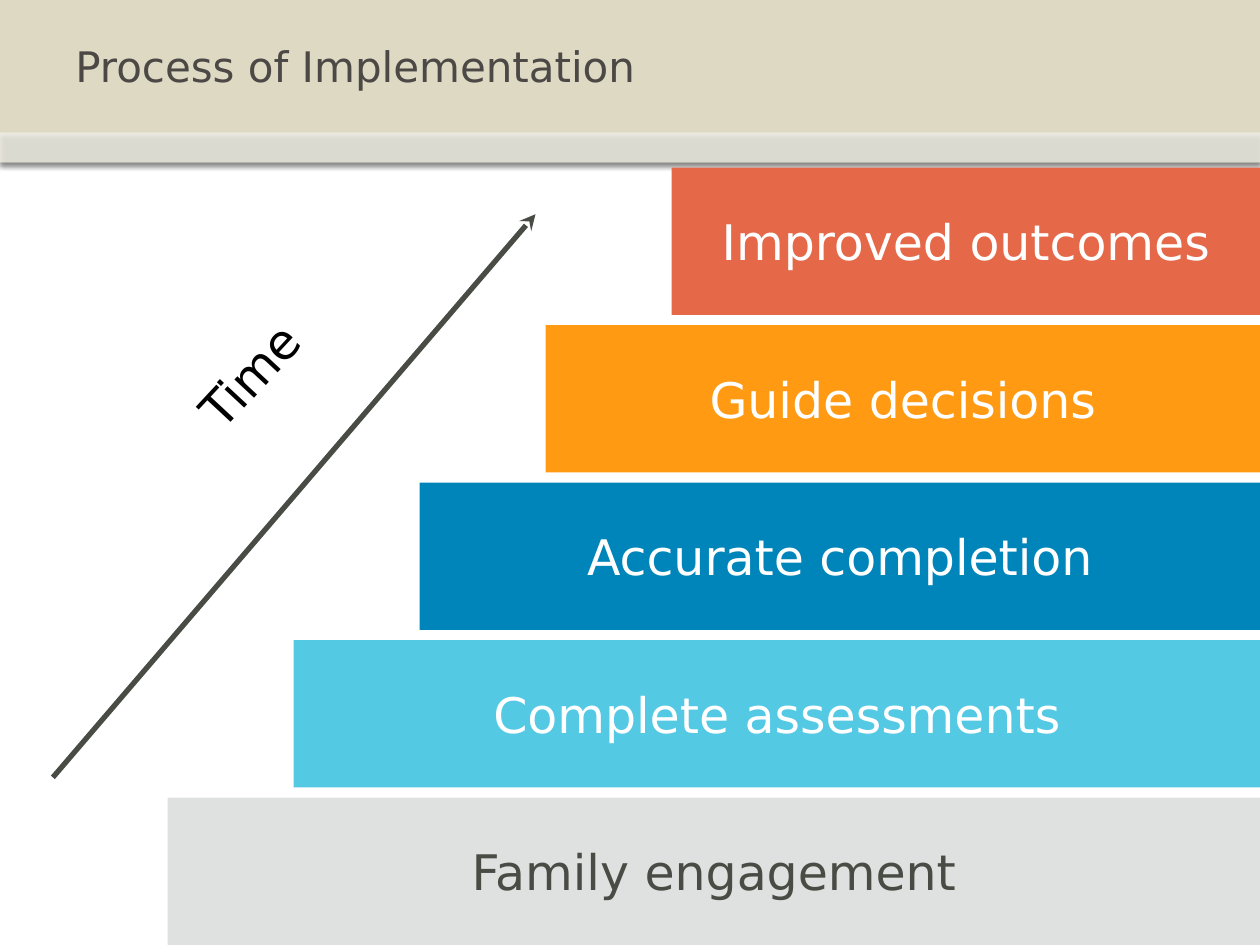
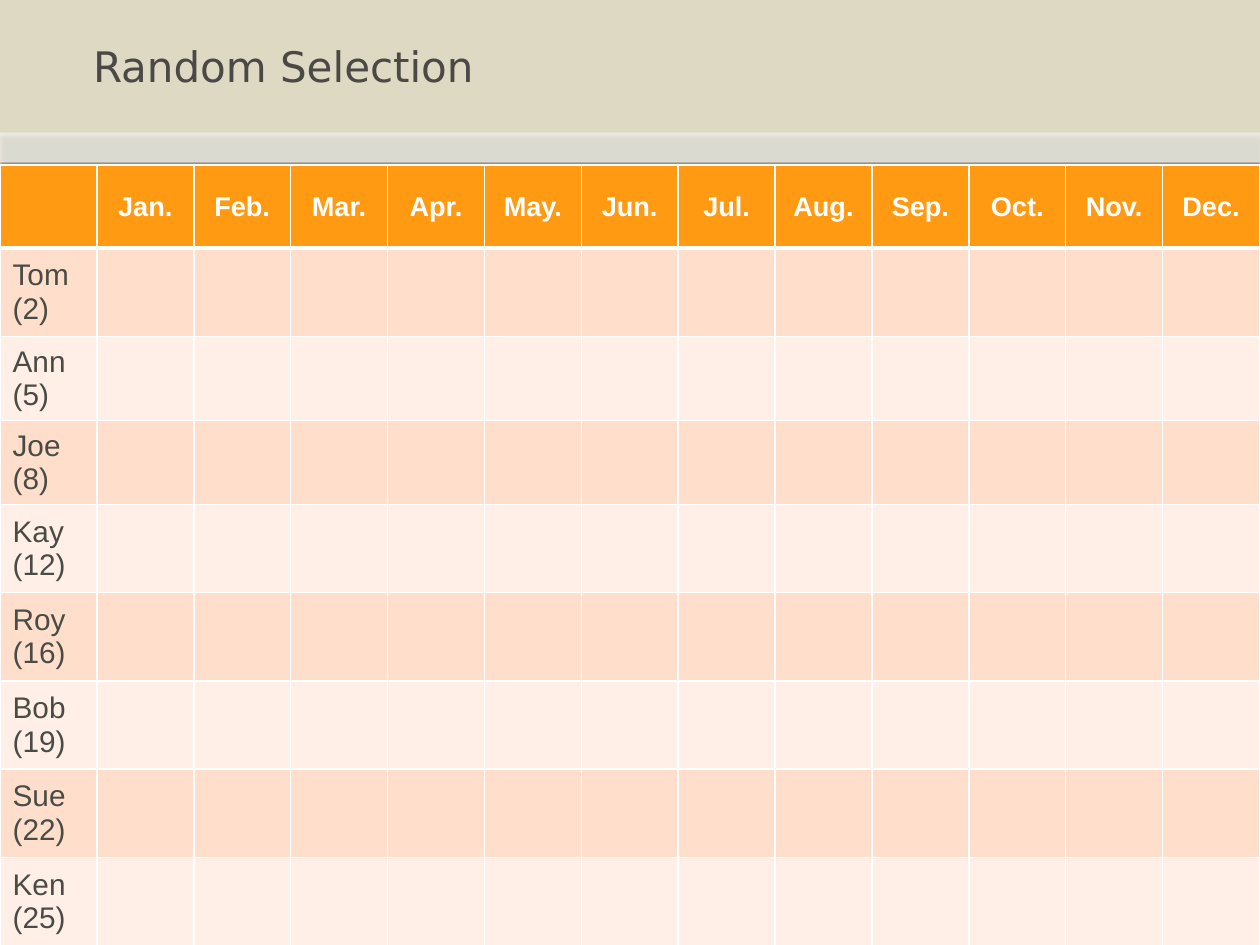
from lxml import etree
from pptx import Presentation
from pptx.dml.color import RGBColor
from pptx.enum.shapes import MSO_CONNECTOR, MSO_SHAPE
from pptx.enum.text import MSO_ANCHOR, PP_ALIGN
from pptx.oxml.ns import qn
from pptx.util import Inches, Pt

RECTANGLE = MSO_SHAPE.RECTANGLE
STRAIGHT = MSO_CONNECTOR.STRAIGHT
MIDDLE = MSO_ANCHOR.MIDDLE
LEFT, CENTER = PP_ALIGN.LEFT, PP_ALIGN.CENTER

SLIDE_W, SLIDE_H = 10, 7.5
HEADING_FONT, TABLE_FONT = "DejaVu Sans", "Arial"
WHITE, INK, TITLE_INK, BLACK = "FFFFFF", "484C45", "4C4845", "000000"
SAND, ORANGE = "DDD9C3", "FF9A12"
ROW_TINTS = ["FFDECC", "FFEFE7"]

# From the bottom step up: wording, fill, text colour
STEPS = [
    ("Family engagement", "DEE1DF", INK),
    ("Complete assessments", "53C9E4", WHITE),
    ("Accurate completion", "0085BA", WHITE),
    ("Guide decisions", ORANGE, WHITE),
    ("Improved outcomes", "E56849", WHITE),
]
STEP_LEFT, STEP_TOP, STEP_H = 1.33, 6.33, 1.17
STEP_SHIFT, STEP_RISE = 1, 1.25

MONTHS = ["Jan.", "Feb.", "Mar.", "Apr.", "May.", "Jun.",
          "Jul.", "Aug.", "Sep.", "Oct.", "Nov.", "Dec."]
PEOPLE = ["Tom (2)", "Ann (5)", "Joe (8)", "Kay (12)",
          "Roy (16)", "Bob\n(19)", "Sue (22)", "Ken\n(25)"]
ROW_HEIGHTS = [0.66, 0.7, 0.66, 0.66, 0.7, 0.7, 0.7, 0.7, 0.7]
TABLE_TOP = 1.31


def rgb(color):
    return RGBColor.from_string(color)


def add_xml(parent, tag, **attributes):
    element = etree.SubElement(parent, qn(tag))
    for name, value in attributes.items():
        element.set(name, str(value))
    return element


def write_text(frame, text, size, color, font=HEADING_FONT, bold=False,
               align=LEFT, indent=0):
    frame.word_wrap = True
    frame.text = text
    for paragraph in frame.paragraphs:
        paragraph.alignment = align
        if indent:
            properties = paragraph._p.get_or_add_pPr()
            properties.set("marL", str(Inches(indent)))
            properties.set("indent", "0")
        for run in paragraph.runs:
            run.font.name = font
            run.font.size = Pt(size)
            run.font.bold = bold
            run.font.color.rgb = rgb(color)


def add_rectangle(slide, left, top, width, height, fill):
    rectangle = slide.shapes.add_shape(
        RECTANGLE, Inches(left), Inches(top), Inches(width), Inches(height))
    rectangle.shadow.inherit = False
    rectangle.fill.solid()
    rectangle.fill.fore_color.rgb = rgb(fill)
    rectangle.line.fill.background()
    return rectangle


def add_band(slide, top, height, fill, opacity=100):
    """Full-width band with a soft shadow below it."""
    band = add_rectangle(slide, 0, top, SLIDE_W, height, fill)
    properties = band._element.spPr
    if opacity < 100:
        color = properties.find(qn("a:solidFill"))[0]
        add_xml(color, "a:alpha", val=opacity * 1000)
    shadow = add_xml(properties.find(qn("a:effectLst")), "a:outerShdw",
                     blurRad=Pt(3.1), dist=Pt(1.8), dir=90 * 60000,
                     rotWithShape=0)
    color = add_xml(shadow, "a:srgbClr", val=BLACK)
    add_xml(color, "a:alpha", val=35000)


def add_titled_slide(deck, title, indent=0):
    slide = deck.slides.add_slide(deck.slide_layouts[6])
    add_band(slide, 0, 1.29, SAND)
    add_band(slide, 1.05, 0.24, WHITE, opacity=53)
    title_box = slide.shapes.add_textbox(
        Inches(0.5), 0, Inches(9), Inches(1.05))
    title_box.text_frame.vertical_anchor = MIDDLE
    write_text(title_box.text_frame, title, 24, TITLE_INK, indent=indent)
    return slide


def add_time_arrow(slide):
    arrow = slide.shapes.add_connector(
        STRAIGHT, Inches(0.42), Inches(6.17), Inches(4.25), Inches(1.7))
    arrow.line.color.rgb = rgb(INK)
    arrow.line.width = Pt(3)
    add_xml(arrow.line._get_or_add_ln(), "a:tailEnd", type="stealth")
    add_xml(arrow._element.spPr, "a:effectLst")

    label = slide.shapes.add_textbox(
        Inches(1.26), Inches(2.36), Inches(2.05), Inches(0.57))
    label.rotation = 312.9
    write_text(label.text_frame, "Time", 28, BLACK)


def build_process(deck):
    slide = add_titled_slide(deck, "Process of Implementation")
    for level, (wording, fill, color) in enumerate(STEPS):
        left = STEP_LEFT + level * STEP_SHIFT
        step = add_rectangle(slide, left, STEP_TOP - level * STEP_RISE,
                             SLIDE_W - left, STEP_H, fill)
        step.text_frame.vertical_anchor = MIDDLE
        write_text(step.text_frame, wording, 28, color, align=CENTER)
    add_time_arrow(slide)


def style_cell(cell, fill, top=1, bottom=1):
    """Fill the cell and give it white borders, widths in points."""
    properties = cell._tc.get_or_add_tcPr()
    for side, width in zip("LRTB", (1, 1, top, bottom)):
        border = add_xml(properties, "a:ln" + side, w=Pt(width))
        add_xml(add_xml(border, "a:solidFill"), "a:srgbClr", val=WHITE)
    cell.fill.solid()
    cell.fill.fore_color.rgb = rgb(fill)
    cell.vertical_anchor = MIDDLE


def build_selection(deck):
    slide = add_titled_slide(deck, "Random Selection", indent=0.14)
    columns = len(MONTHS) + 1
    schedule = slide.shapes.add_table(
        len(ROW_HEIGHTS), columns, 0, Inches(TABLE_TOP),
        Inches(SLIDE_W), Inches(sum(ROW_HEIGHTS))).table
    schedule.horz_banding = False
    for column in schedule.columns:
        column.width = Inches(SLIDE_W / columns)
    for row, height in zip(schedule.rows, ROW_HEIGHTS):
        row.height = Inches(height)

    for cell in schedule.rows[0].cells:
        style_cell(cell, ORANGE, bottom=3)
    for number, month in enumerate(MONTHS, 1):
        write_text(schedule.cell(0, number).text_frame, month, 15.5, WHITE,
                   font=TABLE_FONT, bold=True, align=CENTER)

    for number, person in enumerate(PEOPLE, 1):
        for cell in schedule.rows[number].cells:
            style_cell(cell, ROW_TINTS[(number - 1) % 2],
                       top=3 if number == 1 else 1)
        write_text(schedule.cell(number, 0).text_frame, person, 17, INK,
                   font=TABLE_FONT)


def main():
    deck = Presentation()
    deck.slide_width, deck.slide_height = Inches(SLIDE_W), Inches(SLIDE_H)
    build_process(deck)
    build_selection(deck)
    deck.save("out.pptx")


if __name__ == "__main__":
    main()
